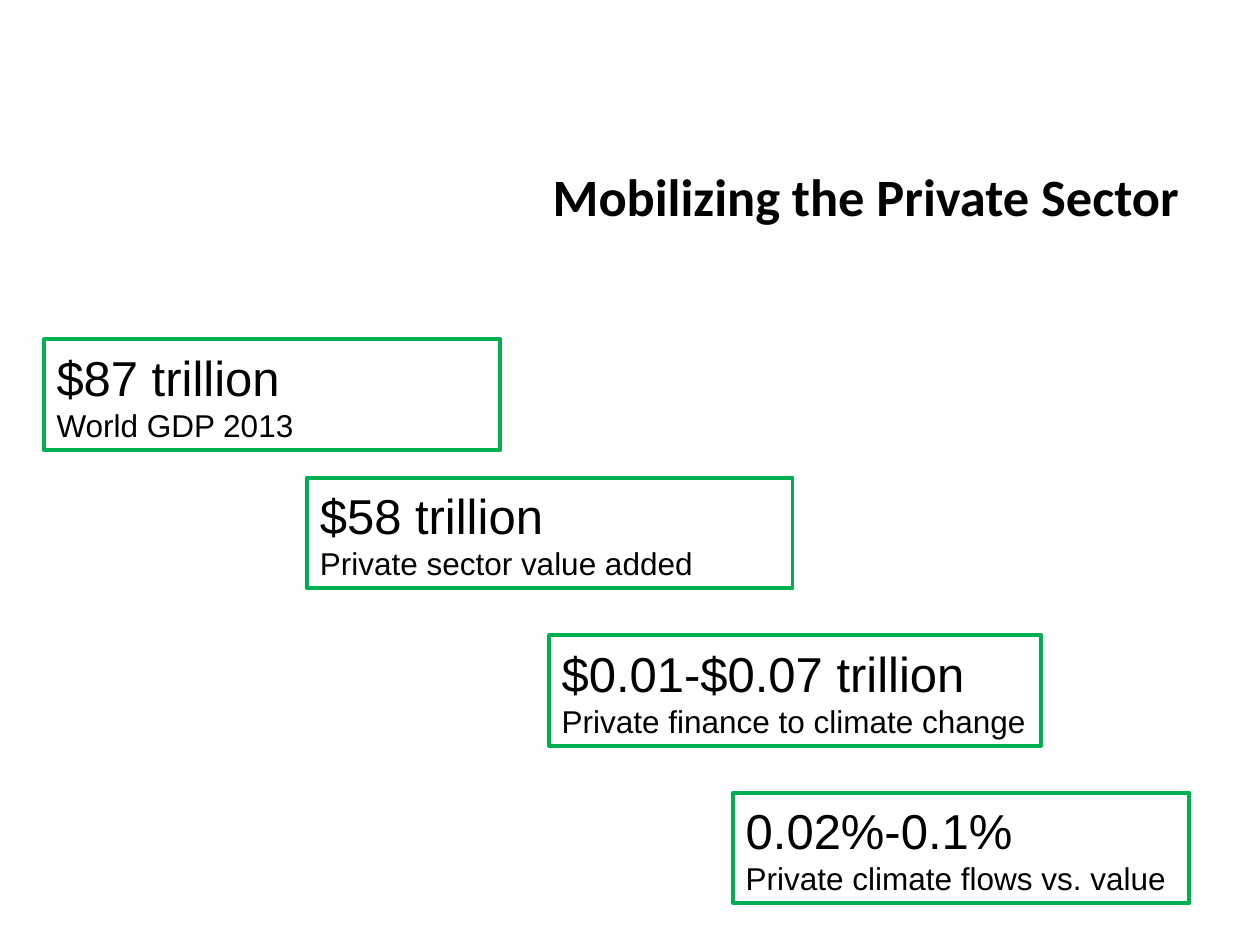
from pptx import Presentation
from pptx.dml.color import RGBColor
from pptx.enum.shapes import MSO_SHAPE
from pptx.enum.text import MSO_ANCHOR, PP_ALIGN
from pptx.util import Inches, Pt

RECTANGLE = MSO_SHAPE.RECTANGLE
MIDDLE, BOTTOM = MSO_ANCHOR.MIDDLE, MSO_ANCHOR.BOTTOM
LEFT, RIGHT = PP_ALIGN.LEFT, PP_ALIGN.RIGHT

BLACK = RGBColor(0x00, 0x00, 0x00)
GREEN = RGBColor(0x00, 0xB0, 0x50)

BOX_HEIGHT = 0.88
# left, top, width, figure, caption
FIGURES = [
    (0.35, 2.69, 3.62, "$87 trillion", "World GDP 2013"),
    (2.44, 3.79, 3.85, "$58 trillion", "Private sector value added"),
    (4.36, 5.04, 3.9, "$0.01-$0.07 trillion", "Private finance to climate change"),
    (5.82, 6.29, 3.62, "0.02%-0.1%", "Private climate flows vs. value"),
]


def write_text(paragraph, text, size, font="Arial", bold=False, align=LEFT):
    paragraph.alignment = align
    run = paragraph.add_run()
    run.text = text
    run.font.name = font
    run.font.size = Pt(size)
    run.font.bold = bold
    run.font.color.rgb = BLACK


def add_title(slide, left, top, width, height, text):
    shape = slide.shapes.add_textbox(
        Inches(left), Inches(top), Inches(width), Inches(height))
    frame = shape.text_frame
    frame.word_wrap = True
    frame.vertical_anchor = MIDDLE
    write_text(frame.paragraphs[0], text, size=30, font="Calibri",
               bold=True, align=RIGHT)


def add_figure_box(slide, left, top, width, height, figure, caption):
    shape = slide.shapes.add_shape(
        RECTANGLE, Inches(left), Inches(top), Inches(width), Inches(height))
    shape.shadow.inherit = False
    shape.fill.background()
    shape.line.color.rgb = GREEN
    shape.line.width = Pt(2.25)
    frame = shape.text_frame
    frame.word_wrap = True
    frame.vertical_anchor = BOTTOM
    write_text(frame.paragraphs[0], figure, size=28)
    write_text(frame.add_paragraph(), caption, size=18)


def main():
    presentation = Presentation()
    presentation.slide_width = Inches(10)
    presentation.slide_height = Inches(7.5)
    slide = presentation.slides.add_slide(presentation.slide_layouts[6])
    add_title(slide, 3.44, 1.32, 6.02, 0.46, "Mobilizing the Private Sector")
    for left, top, width, figure, caption in FIGURES:
        add_figure_box(slide, left, top, width, BOX_HEIGHT, figure, caption)
    presentation.save("out.pptx")


if __name__ == "__main__":
    main()
